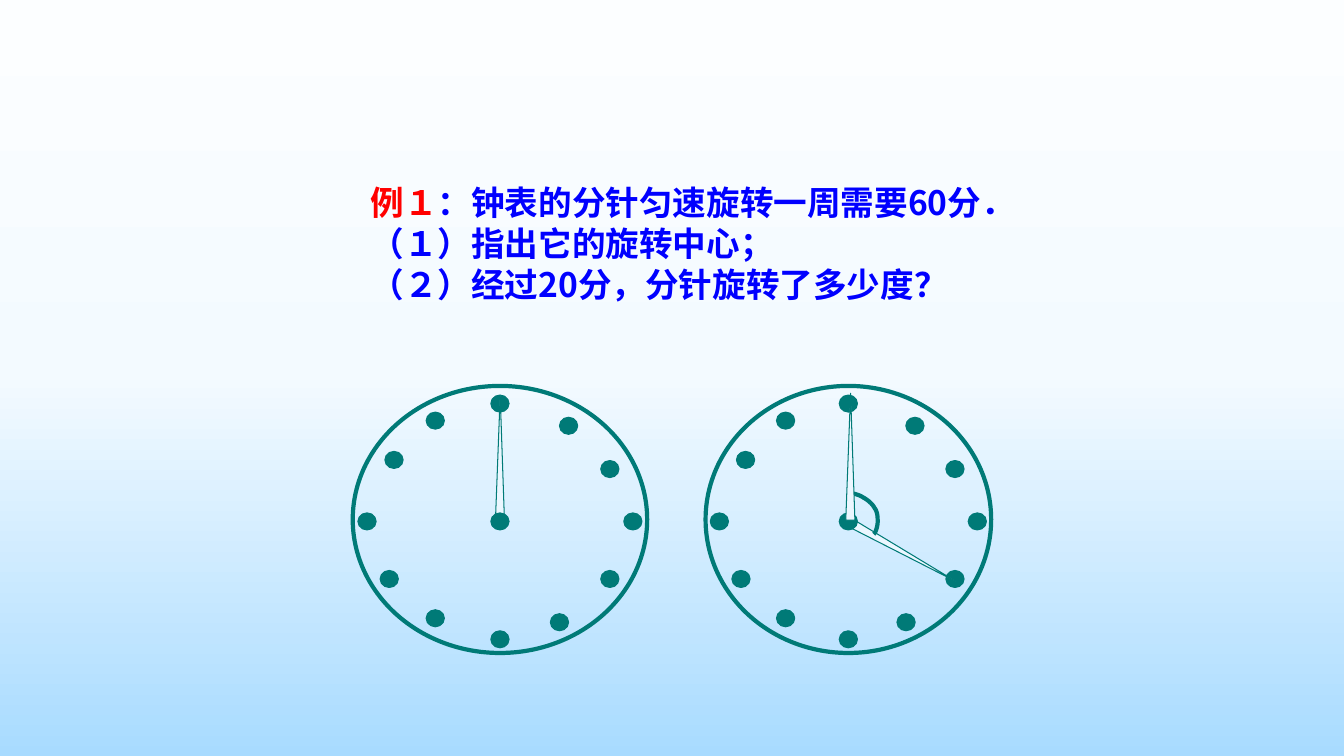
from copy import deepcopy
from dataclasses import dataclass

from lxml.etree import SubElement
from pptx import Presentation
from pptx.dml.color import RGBColor
from pptx.enum.shapes import MSO_SHAPE
from pptx.oxml.ns import qn
from pptx.util import Cm, Pt


@dataclass(frozen=True)
class Theme:
    font: str = "Noto Sans CJK SC"
    text_size: Pt = Pt(24)
    line_pitch: Pt = Pt(29.2)
    label: RGBColor = RGBColor(0xFF, 0x00, 0x00)
    question: RGBColor = RGBColor(0x00, 0x00, 0xFF)
    clock: RGBColor = RGBColor(0x00, 0x7A, 0x77)
    hand: RGBColor = RGBColor(0xEB, 0xF7, 0xFF)
    thick: Pt = Pt(3)
    thin: Pt = Pt(0.75)
    sky: tuple = ((0, "FCFEFF"), (0.5, "F3FAFF"), (1, "A8DBFF"))


THEME = Theme()

QUESTION = (
    (("例１", THEME.label), ("：钟表的分针匀速旋转一周需要60分．", THEME.question)),
    (("（１）指出它的旋转中心；", THEME.question),),
    (("（２）经过20分，分针旋转了多少度？", THEME.question),),
)

# Clock geometry in cm, measured from the hub
HUB_Y = 13.14
FACE_WIDTH, FACE_HEIGHT, FACE_RISE = 7.42, 6.73, 0.05
DOT_SIZE = (0.46, 0.43)
HAND_SIZE = (0.23, 3.2)
HOUR_DOTS = (
    (0, -2.97), (1.73, -2.41), (2.77, -1.32), (3.35, 0),
    (2.77, 1.45), (1.5, 2.54), (0, 2.97), (-1.63, 2.44),
    (-2.79, 1.45), (-3.35, 0), (-2.67, -1.55), (-1.63, -2.54),
)
# Bezier points of the turning angle: each curve starts where the last ended
ANGLE_CURVE = (
    (0.03, -0.72), (0.15, -0.7), (0.28, -0.67), (0.38, -0.6),
    (0.48, -0.55), (0.61, -0.44), (0.66, -0.34),
    (0.74, -0.24), (0.74, -0.09), (0.74, 0.01),
    (0.74, 0.11), (0.69, 0.29), (0.64, 0.32),
)


def paint_background(slide):
    fill = slide.background.fill
    fill.gradient()
    fill.gradient_angle = 270
    stop_list = slide.element.find(".//" + qn("a:gsLst"))
    stop_list.insert(1, deepcopy(stop_list[0]))
    for stop, (position, colour) in zip(fill.gradient_stops, THEME.sky):
        stop.position = position
        stop.color.rgb = RGBColor.from_string(colour)


def style_font(font):
    font.name = THEME.font
    font.size = THEME.text_size
    font.bold = True


def add_question(slide):
    frame = slide.shapes.add_textbox(Cm(9.09), Cm(4.45), Cm(17.35), Cm(3.47)).text_frame
    frame.word_wrap = True
    for index, pieces in enumerate(QUESTION):
        line = frame.paragraphs[0] if index == 0 else frame.add_paragraph()
        line.line_spacing = THEME.line_pitch
        style_font(line.font)
        east_asian = SubElement(line.font._element, qn("a:ea"))
        east_asian.set("typeface", THEME.font)
        for words, colour in pieces:
            run = line.add_run()
            run.text = words
            if len(pieces) > 1:
                run.font.color.rgb = colour
            else:
                line.font.color.rgb = colour


def add_part(clock, kind, centre, size, fill=None, line_width=THEME.thin):
    (x, y), (width, height) = centre, size
    part = clock.shapes.add_shape(
        kind, Cm(x - width / 2), Cm(y - height / 2), Cm(width), Cm(height))
    part.shadow.inherit = False
    if fill is None:
        part.fill.background()
    else:
        part.fill.solid()
        part.fill.fore_color.rgb = fill
    part.line.color.rgb = THEME.clock
    part.line.width = line_width
    return part


def add_dot(clock, x, y):
    add_part(clock, MSO_SHAPE.OVAL, (x, y), DOT_SIZE, THEME.clock)


def add_hand(clock, x, y, tip=0.529, rotation=0):
    hand = add_part(clock, MSO_SHAPE.ISOSCELES_TRIANGLE, (x, y), HAND_SIZE, THEME.hand)
    hand.adjustments[0] = tip
    hand.rotation = rotation


def add_face(slide, hub_x, stretch=1):
    clock = slide.shapes.add_group_shape()
    add_part(clock, MSO_SHAPE.OVAL, (hub_x, HUB_Y - FACE_RISE),
             (FACE_WIDTH * stretch, FACE_HEIGHT), line_width=THEME.thick)
    for dx, dy in HOUR_DOTS:
        add_dot(clock, hub_x + dx * stretch, HUB_Y + dy)
    return clock


def bezier_point(points, t):
    weights = ((1 - t) ** 3, 3 * t * (1 - t) ** 2, 3 * t ** 2 * (1 - t), t ** 3)
    return tuple(sum(w * p[axis] for w, p in zip(weights, points)) for axis in (0, 1))


def add_angle(clock, hub_x, steps=8):
    curve = [ANGLE_CURVE[0]]
    for first in range(0, len(ANGLE_CURVE) - 1, 3):
        curve += [bezier_point(ANGLE_CURVE[first:first + 4], step / steps)
                  for step in range(1, steps + 1)]
    start, *rest = [(Cm(hub_x + dx), Cm(HUB_Y + dy)) for dx, dy in curve]
    builder = clock.shapes.build_freeform(*start)
    builder.add_line_segments(rest, close=False)
    angle = builder.convert_to_shape()
    angle.shadow.inherit = False
    angle.fill.background()
    angle.line.color.rgb = THEME.clock
    angle.line.width = THEME.thick


def add_start_clock(slide, hub_x):
    clock = add_face(slide, hub_x)
    add_hand(clock, hub_x, HUB_Y - 1.58)
    add_dot(clock, hub_x, HUB_Y)


def add_turned_clock(slide, hub_x):
    clock = add_face(slide, hub_x, stretch=0.97)
    add_hand(clock, hub_x + 1.35, HUB_Y + 0.69, tip=1, rotation=117)
    add_dot(clock, hub_x, HUB_Y)
    add_angle(clock, hub_x)
    add_hand(clock, hub_x + 0.05, HUB_Y - 1.63)


def main():
    deck = Presentation()
    deck.slide_width, deck.slide_height = Cm(33.87), Cm(19.05)
    slide = deck.slides.add_slide(deck.slide_layouts[6])
    paint_background(slide)
    add_question(slide)
    # Minute hand before and after 20 minutes
    add_start_clock(slide, 12.6)
    add_turned_clock(slide, 21.38)
    deck.save("out.pptx")


if __name__ == "__main__":
    main()
